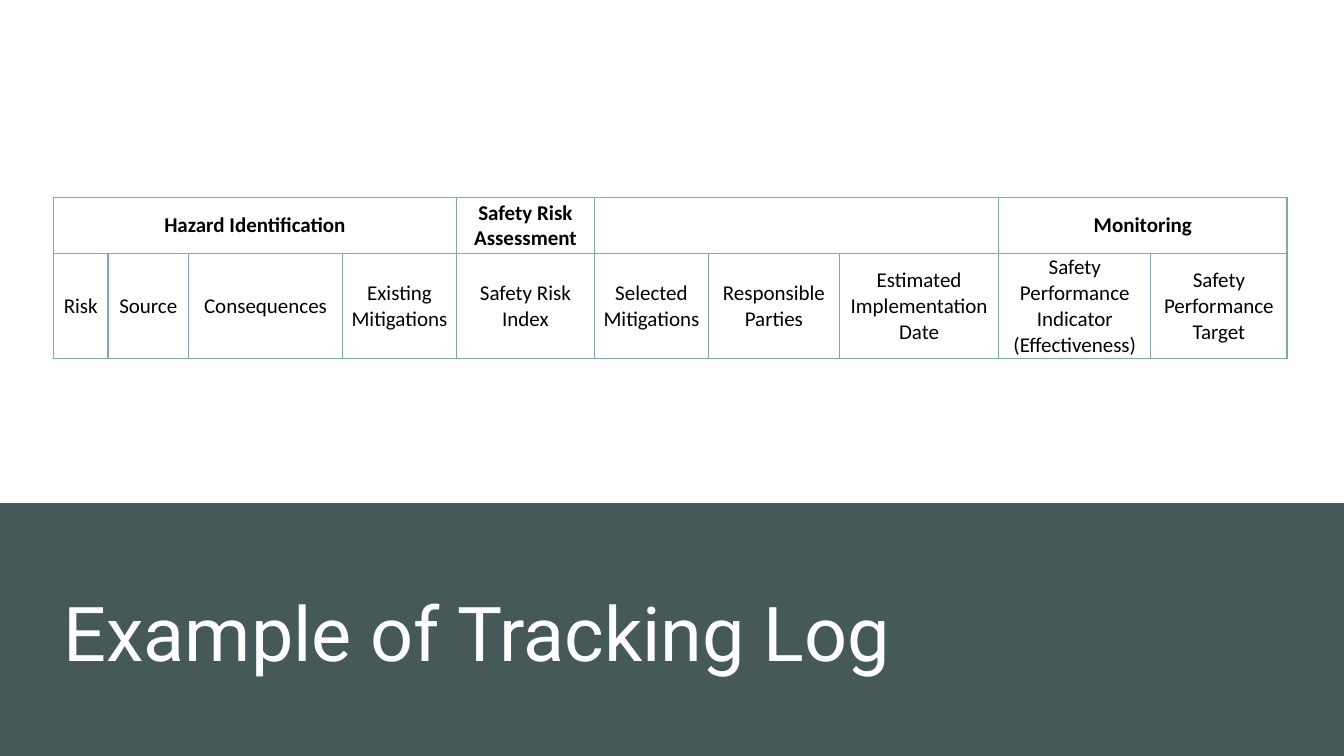
from lxml import etree
from pptx import Presentation
from pptx.dml.color import RGBColor
from pptx.enum.shapes import MSO_SHAPE
from pptx.enum.text import MSO_ANCHOR, PP_ALIGN
from pptx.oxml.ns import qn
from pptx.util import Pt

RECTANGLE = MSO_SHAPE.RECTANGLE
MIDDLE, BOTTOM = MSO_ANCHOR.MIDDLE, MSO_ANCHOR.BOTTOM
CENTER = PP_ALIGN.CENTER

TITLE = "Example of Tracking Log"
# Each group: heading, then its columns as (label, width)
GROUPS = [
    ("Hazard Identification", [
        ("Risk", 39), ("Source", 57.5), ("Consequences", 110),
        ("Existing Mitigations", 81.4)]),
    ("Safety Risk Assessment", [("Safety Risk Index", 98.6)]),
    ("", [
        ("Selected Mitigations", 81.4), ("Responsible Parties", 93.6),
        ("Estimated Implementation Date", 113.8)]),
    ("Monitoring", [
        ("Safety Performance Indicator (Effectiveness)", 108.7),
        ("Safety Performance Target", 97.2)]),
]
ROW_HEIGHTS = [39.8, 75.4]
PAGE_WIDTH, PAGE_HEIGHT = 960, 540
BAND_TOP = 359.3
LEFT, TABLE_TOP = 38.2, 141
GREEN, WHITE, BLACK, BORDER = "465959", "FFFFFF", "000000", "7DA8B5"


def color(value):
    return RGBColor.from_string(value)


def style_text(para, font, size, value, bold=False):
    for span in para.runs:
        span.font.name = font
        span.font.size = Pt(size)
        span.font.bold = bold
        span.font.color.rgb = color(value)


def add_borders(cell):
    properties = cell._tc.get_or_add_tcPr()
    for index, side in enumerate(("a:lnL", "a:lnR", "a:lnT", "a:lnB")):
        line = etree.Element(qn(side), w=str(Pt(1)))
        fill = etree.SubElement(line, qn("a:solidFill"))
        etree.SubElement(fill, qn("a:srgbClr"), val=BORDER)
        properties.insert(index, line)


def fill_cell(cell, text, bold):
    cell.vertical_anchor = MIDDLE
    cell.margin_left = cell.margin_right = cell.margin_top = Pt(0.7)
    cell.margin_bottom = Pt(0)
    para = cell.text_frame.paragraphs[0]
    para.text = text
    para.alignment = CENTER
    style_text(para, "Calibri", 15, BLACK, bold)


def add_log_table(page):
    columns = [column for _, group in GROUPS for column in group]
    total_width = sum(width for _, width in columns)
    frame = page.shapes.add_table(
        len(ROW_HEIGHTS), len(columns), Pt(LEFT), Pt(TABLE_TOP),
        Pt(total_width), Pt(sum(ROW_HEIGHTS)))
    table = frame.table
    table.first_row = table.horz_banding = False
    for row, height in zip(table.rows, ROW_HEIGHTS):
        row.height = Pt(height)
    for cell in table.iter_cells():
        cell.fill.background()
        add_borders(cell)
    for index, (label, width) in enumerate(columns):
        table.columns[index].width = Pt(width)
        fill_cell(table.cell(1, index), label, False)
    start = 0
    for heading, group in GROUPS:
        end = start + len(group) - 1
        if end > start:
            table.cell(0, start).merge(table.cell(0, end))
        fill_cell(table.cell(0, start), heading, True)
        start = end + 1


def add_title_band(page):
    band = page.shapes.add_shape(
        RECTANGLE, Pt(0), Pt(BAND_TOP), Pt(PAGE_WIDTH), Pt(PAGE_HEIGHT - BAND_TOP))
    band.shadow.inherit = False
    band.fill.solid()
    band.fill.fore_color.rgb = color(GREEN)
    band.line.fill.background()

    box = page.shapes.add_textbox(Pt(LEFT), Pt(388), Pt(856), Pt(98.6))
    box.text_frame.word_wrap = True
    box.text_frame.vertical_anchor = BOTTOM
    box.text_frame.text = TITLE
    style_text(box.text_frame.paragraphs[0], "Roboto", 54, WHITE)


def main():
    deck = Presentation()
    deck.slide_width, deck.slide_height = Pt(PAGE_WIDTH), Pt(PAGE_HEIGHT)
    page = deck.slides.add_slide(deck.slide_layouts[6])
    page.background.fill.solid()
    page.background.fill.fore_color.rgb = color(WHITE)
    add_title_band(page)
    add_log_table(page)
    deck.save("out.pptx")


if __name__ == "__main__":
    main()
